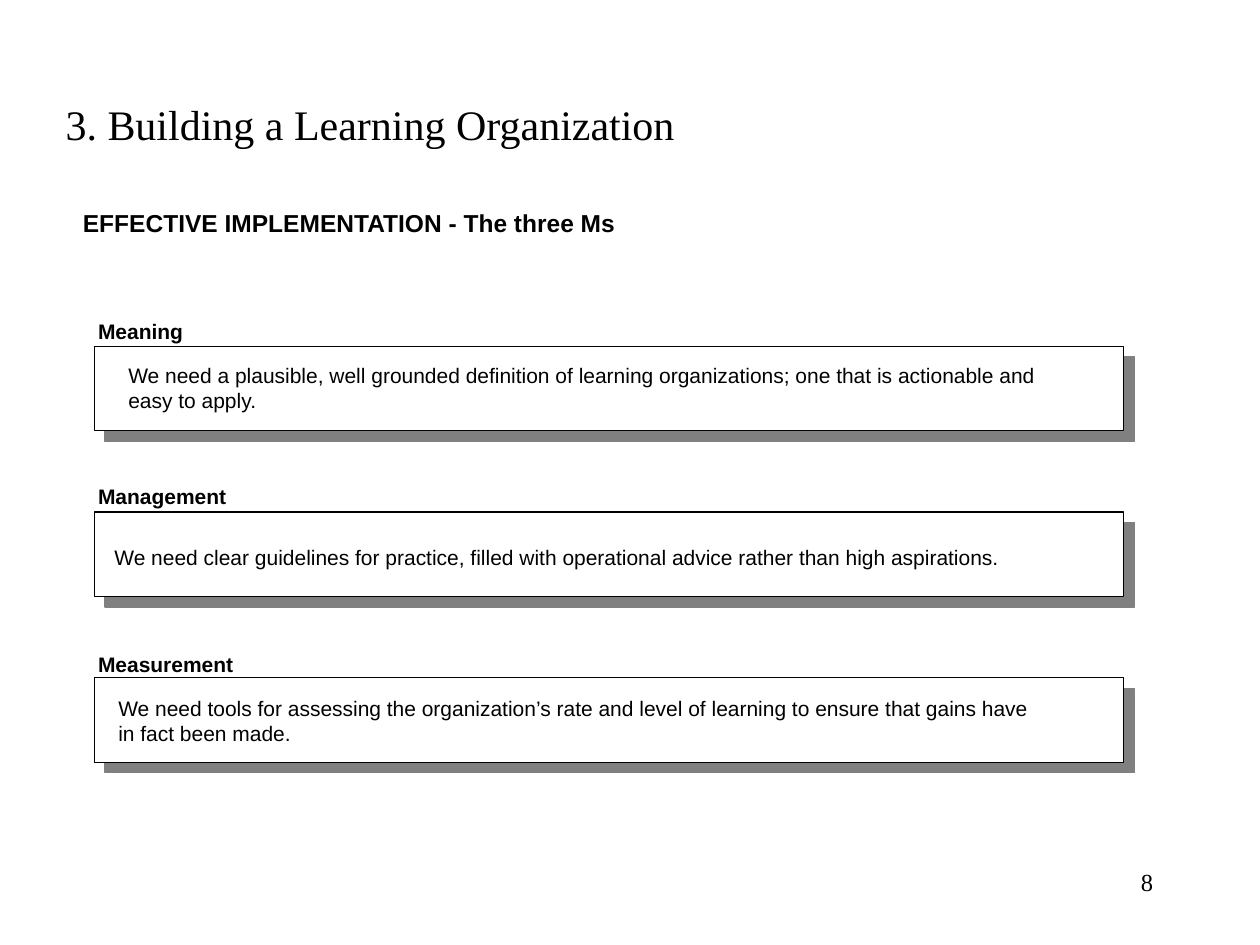
"""Build the slide on the three Ms of effective implementation."""
import lxml.etree
import pptx
import pptx.dml.color
import pptx.enum.shapes
import pptx.enum.text
import pptx.oxml.ns
import pptx.util
from pptx.util import Inches

BLACK = pptx.dml.color.RGBColor(0x00, 0x00, 0x00)
WHITE = pptx.dml.color.RGBColor(0xFF, 0xFF, 0xFF)
GREY = pptx.dml.color.RGBColor(0x80, 0x80, 0x80)

ROW_TOP = 2.75
ROW_PITCH = 1.315
ROWS = [
    ("Meaning", 2.48, 0.92, 2.83, 7.67, 0.5,
     "We need a plausible, well grounded definition of learning organizations; "
     "one that is actionable and easy to apply."),
    ("Management", 3.79, 0.81, 4.27, 7.23, 0.3,
     "We need clear guidelines for practice, filled with operational advice "
     "rather than high aspirations."),
    ("Measurement", 5.12, 0.84, 5.47, 7.48, 0.5,
     "We need tools for assessing the organization’s rate and level of learning "
     "to ensure that gains have\nin fact been made."),
]


def write_text(shape, text, size, font="Arial", bold=False, wrap=False,
               align=pptx.enum.text.PP_ALIGN.LEFT):
    frame = shape.text_frame
    frame.text = text
    frame.word_wrap = wrap
    frame.auto_size = pptx.enum.text.MSO_AUTO_SIZE.NONE
    frame.vertical_anchor = pptx.enum.text.MSO_ANCHOR.TOP
    for paragraph in frame.paragraphs:
        paragraph.alignment = align
        paragraph.font.name = font
        paragraph.font.size = pptx.util.Pt(size)
        paragraph.font.bold = bold
        paragraph.font.color.rgb = BLACK


def add_hard_shadow(shape):
    shape.shadow.inherit = False
    qn = pptx.oxml.ns.qn
    effects = shape._element.spPr.find(qn("a:effectLst"))
    shadow = lxml.etree.SubElement(
        effects, qn("a:outerShdw"), blurRad="0", dist=str(pptx.util.Pt(8.5)),
        dir="2700000", algn="ctr", rotWithShape="0")
    lxml.etree.SubElement(shadow, qn("a:srgbClr"), val=str(GREY))


deck = pptx.Presentation()
deck.slide_width, deck.slide_height = Inches(10), Inches(7.5)
page = deck.slides.add_slide(deck.slide_layouts[5])

title = page.shapes.title
title.left, title.top = Inches(0.42), Inches(0.73)
title.width, title.height = Inches(5.04), Inches(0.5)
write_text(title, "3. Building a Learning Organization", 24, "Times New Roman")

heading = page.shapes.add_textbox(Inches(0.56), Inches(1.6), Inches(4.46), Inches(0.34))
write_text(heading, "EFFECTIVE IMPLEMENTATION - The three Ms", 14, bold=True)

for index, (name, name_top, left, top, width, height, need) in enumerate(ROWS):
    box = page.shapes.add_shape(
        pptx.enum.shapes.MSO_SHAPE.RECTANGLE, Inches(0.75),
        Inches(ROW_TOP + index * ROW_PITCH), Inches(8.17), Inches(0.67))
    box.fill.solid()
    box.fill.fore_color.rgb = WHITE
    box.line.color.rgb = BLACK
    box.line.width = pptx.util.Pt(0.75)
    add_hard_shadow(box)

    label = page.shapes.add_textbox(
        Inches(0.68), Inches(name_top), Inches(1.27), Inches(0.3))
    write_text(label, name, 12, bold=True)

    statement = page.shapes.add_textbox(
        Inches(left), Inches(top), Inches(width), Inches(height))
    write_text(statement, need, 12, wrap=True)

number = page.shapes.add_textbox(Inches(7.17), Inches(6.83), Inches(2.08), Inches(0.5))
write_text(number, "8", 14, "Times New Roman", wrap=True,
           align=pptx.enum.text.PP_ALIGN.RIGHT)

deck.save("out.pptx")
